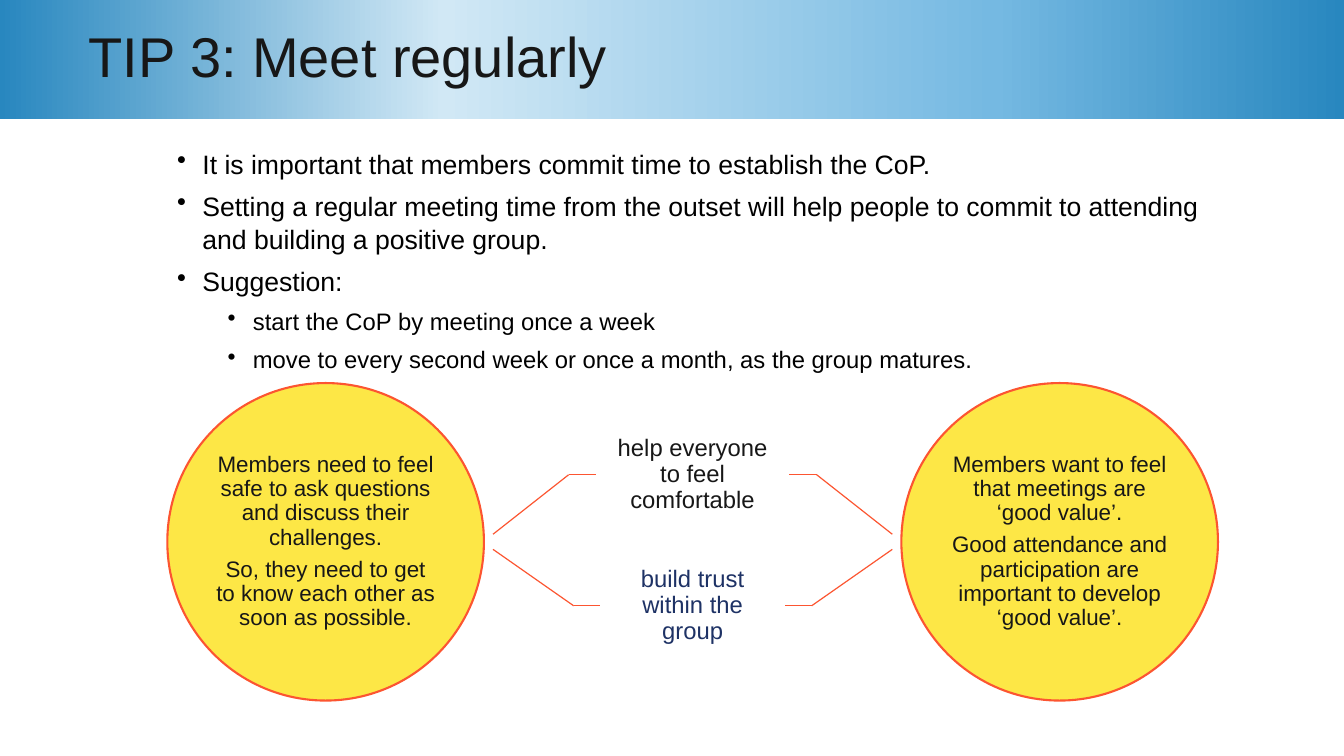
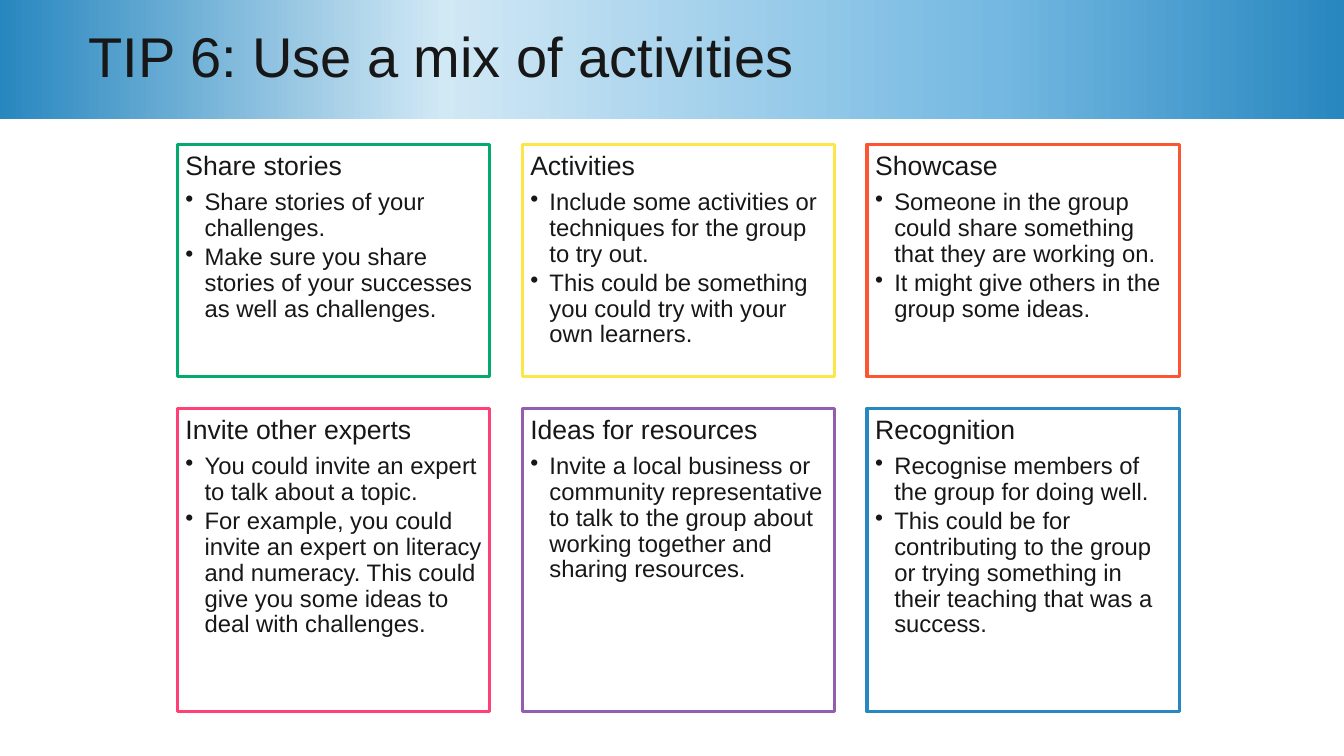
from copy import deepcopy
from itertools import pairwise

from lxml import etree
from pptx import Presentation
from pptx.dml.color import RGBColor
from pptx.enum import shapes, text
from pptx.oxml import ns
from pptx.util import Inches, Pt

FONT = "Arial"
INK, BLACK, NAVY, WHITE = "171717", "000000", "1E3265", "FFFFFF"
YELLOW, ORANGE, BLUE = "FDE746", "FC5531", "2887BF"
BAND_STOPS = [(0, BLUE), (0.33, "D1E8F5"), (0.74, "75B9E2"), (1, BLUE)]
SLIDE_WIDTH, SLIDE_HEIGHT = 13.33, 7.5

CIRCLE_TOP, CIRCLE_WIDTH, CIRCLE_HEIGHT = 3.8, 3.14, 3.15
LEFT_CIRCLE, RIGHT_CIRCLE = 1.66, 8.94
CENTRE = (LEFT_CIRCLE + RIGHT_CIRCLE + CIRCLE_WIDTH) / 2
BRANCH_START = 4.89

CARD_LEFT, CARD_TOP, CARD_WIDTH = 1.76, 1.43, 3.1
COLUMN_GAP, ROW_GAP = 0.32, 0.31

BODY = [
    ("It is important that members commit time to establish the CoP.", 0),
    ("Setting a regular meeting time from the outset will help people to commit "
     "to attending and building a positive group.", 0),
    ("Suggestion:", 0),
    ("start the CoP by meeting once a week", 1),
    ("move to every second week or once a month, as the group matures.", 1),
]
CIRCLES = [
    (LEFT_CIRCLE, ["Members need to feel safe to ask questions and discuss their challenges.",
                   "So, they need to get to know each other as soon as possible."]),
    (RIGHT_CIRCLE, ["Members want to feel that meetings are ‘good value’.",
                    "Good attendance and participation are important to develop ‘good value’."]),
]
BRANCHES = [
    ("help everyone to feel comfortable", INK, 4.07, 1.91, 1.28, 5.64, 5.3),
    ("build trust within the group", NAVY, 5.35, 1.84, 1.32, 5.69, 5.45),
]
CARD_ROWS = [
    (2.31, [
        ("Share stories", "02AA6D",
         ["Share stories of your challenges.",
          "Make sure you share stories of your successes as well as challenges."]),
        ("Activities", YELLOW,
         ["Include some activities or techniques for the group to try out.",
          "This could be something you could try with your own learners."]),
        ("Showcase", ORANGE,
         ["Someone in the group could share something that they are working on.",
          "It might give others in the group some ideas."]),
    ]),
    (3.01, [
        ("Invite other experts", "FF4076",
         ["You could invite an expert to talk about a topic.",
          "For example, you could invite an expert on literacy and numeracy. "
          "This could give you some ideas to deal with challenges."]),
        ("Ideas for resources", "935DB1",
         ["Invite a local business or community representative to talk to the group "
          "about working together and sharing resources."]),
        ("Recognition", BLUE,
         ["Recognise members of the group for doing well.",
          "This could be for contributing to the group or trying something in their "
          "teaching that was a success."]),
    ]),
]


def color(value):
    return RGBColor.from_string(value)


def set_frame(shape, inset=None, anchor=text.MSO_ANCHOR.TOP):
    frame = shape.text_frame
    frame.word_wrap = True
    frame.vertical_anchor = anchor
    if inset is not None:
        frame.margin_left = frame.margin_right = Inches(inset)
        frame.margin_top = frame.margin_bottom = Inches(inset)
    return frame


def add_para(frame, words, size, ink=INK, after=0, spacing=0.9,
             align=text.PP_ALIGN.LEFT, indent=0, hang=0, level=0):
    para = frame.paragraphs[0]
    if para.runs:
        para = frame.add_paragraph()
    para.add_run().text = words
    para.level = level
    para.alignment = align
    para.line_spacing = spacing
    para.space_before = Pt(0)
    para.space_after = Pt(after)
    props = para._p.get_or_add_pPr()
    props.set("marL", str(Inches(indent)))
    props.set("indent", str(-Inches(hang)))
    if hang:
        etree.SubElement(props, ns.qn("a:buChar")).set("char", "•")
    para.font.name = FONT
    para.font.size = Pt(size)
    para.font.color.rgb = color(ink)


def add_box(page, kind, left, top, width, height, fill, line, weight):
    box = page.shapes.add_shape(kind, Inches(left), Inches(top), Inches(width), Inches(height))
    box.shadow.inherit = False
    box.fill.solid()
    box.fill.fore_color.rgb = color(fill)
    box.line.color.rgb = color(line)
    box.line.width = Pt(weight)
    return box


def add_text(page, left, top, width, height):
    return page.shapes.add_textbox(Inches(left), Inches(top), Inches(width), Inches(height))


def add_line(page, start, end):
    line = page.shapes.add_connector(shapes.MSO_CONNECTOR.STRAIGHT,
                                     *(Inches(value) for value in (*start, *end)))
    line.line.color.rgb = color(ORANGE)
    line.line.width = Pt(0.85)
    etree.SubElement(line._element.spPr, ns.qn("a:effectLst"))
    return line


def add_page(deck, title):
    page = deck.slides.add_slide(deck.slide_layouts[6])
    band = page.shapes.add_shape(shapes.MSO_SHAPE.RECTANGLE, 0, 0, deck.slide_width, Inches(1.18))
    band.shadow.inherit = False
    band.line.fill.background()
    band.fill.gradient()
    band.fill.gradient_angle = 0
    stop_list = band._element.spPr.find(".//" + ns.qn("a:gsLst"))
    for _ in range(len(BAND_STOPS) - len(stop_list)):
        stop_list.append(deepcopy(stop_list[0]))
    for stop, (position, shade) in zip(band.fill.gradient_stops, BAND_STOPS):
        stop.position = position
        stop.color.rgb = color(shade)
    add_para(set_frame(band, anchor=text.MSO_ANCHOR.MIDDLE), title, 40, indent=0.78)
    return page


def add_circle(page, left, paragraphs):
    circle = add_box(page, shapes.MSO_SHAPE.OVAL, left, CIRCLE_TOP, CIRCLE_WIDTH, CIRCLE_HEIGHT,
                     YELLOW, ORANGE, 1.5)
    frame = set_frame(circle, 0, text.MSO_ANCHOR.MIDDLE)
    for words in paragraphs:
        add_para(frame, words, 16, after=5.6, align=text.PP_ALIGN.CENTER)


def add_branch(page, words, ink, top, width, height, elbow, start_y):
    label = add_text(page, CENTRE - width / 2, top, width, height)
    frame = set_frame(label, 0.13, text.MSO_ANCHOR.MIDDLE)
    add_para(frame, words, 17, ink, after=5.95, align=text.PP_ALIGN.CENTER)
    middle = top + height / 2
    for direction, side in ((-1, 1), (1, 3)):
        points = [(CENTRE + direction * (CENTRE - BRANCH_START), start_y),
                  (CENTRE + direction * (CENTRE - elbow), middle),
                  (CENTRE + direction * width / 2, middle)]
        lines = [add_line(page, start, end) for start, end in pairwise(points)]
        lines[-1].end_connect(label, side)


def add_card(page, left, top, height, heading, line, bullets):
    card = add_box(page, shapes.MSO_SHAPE.RECTANGLE, left, top, CARD_WIDTH, height,
                   WHITE, line, 2.25)
    frame = set_frame(card, 0.08)
    add_para(frame, heading, 19, after=6.65)
    for words in bullets:
        add_para(frame, words, 17, after=2.55, indent=0.19, hang=0.19, level=1)


def build_meetings(deck):
    page = add_page(deck, "TIP 3: Meet regularly")
    frame = set_frame(add_text(page, 1.66, 1.4, 10.7, 2.35))
    for words, level in BODY:
        add_para(frame, words, 19 - 2 * level, BLACK, after=6, spacing=1.05,
                 indent=0.25 + 0.5 * level, hang=0.25, level=level)
    for circle in CIRCLES:
        add_circle(page, *circle)
    for branch in BRANCHES:
        add_branch(page, *branch)


def build_activities(deck):
    page = add_page(deck, "TIP 6: Use a mix of activities")
    top = CARD_TOP
    for height, cards in CARD_ROWS:
        for column, card in enumerate(cards):
            add_card(page, CARD_LEFT + column * (CARD_WIDTH + COLUMN_GAP), top, height, *card)
        top += height + ROW_GAP


def main():
    deck = Presentation()
    deck.slide_width = Inches(SLIDE_WIDTH)
    deck.slide_height = Inches(SLIDE_HEIGHT)
    build_meetings(deck)
    build_activities(deck)
    deck.save("out.pptx")


if __name__ == "__main__":
    main()
